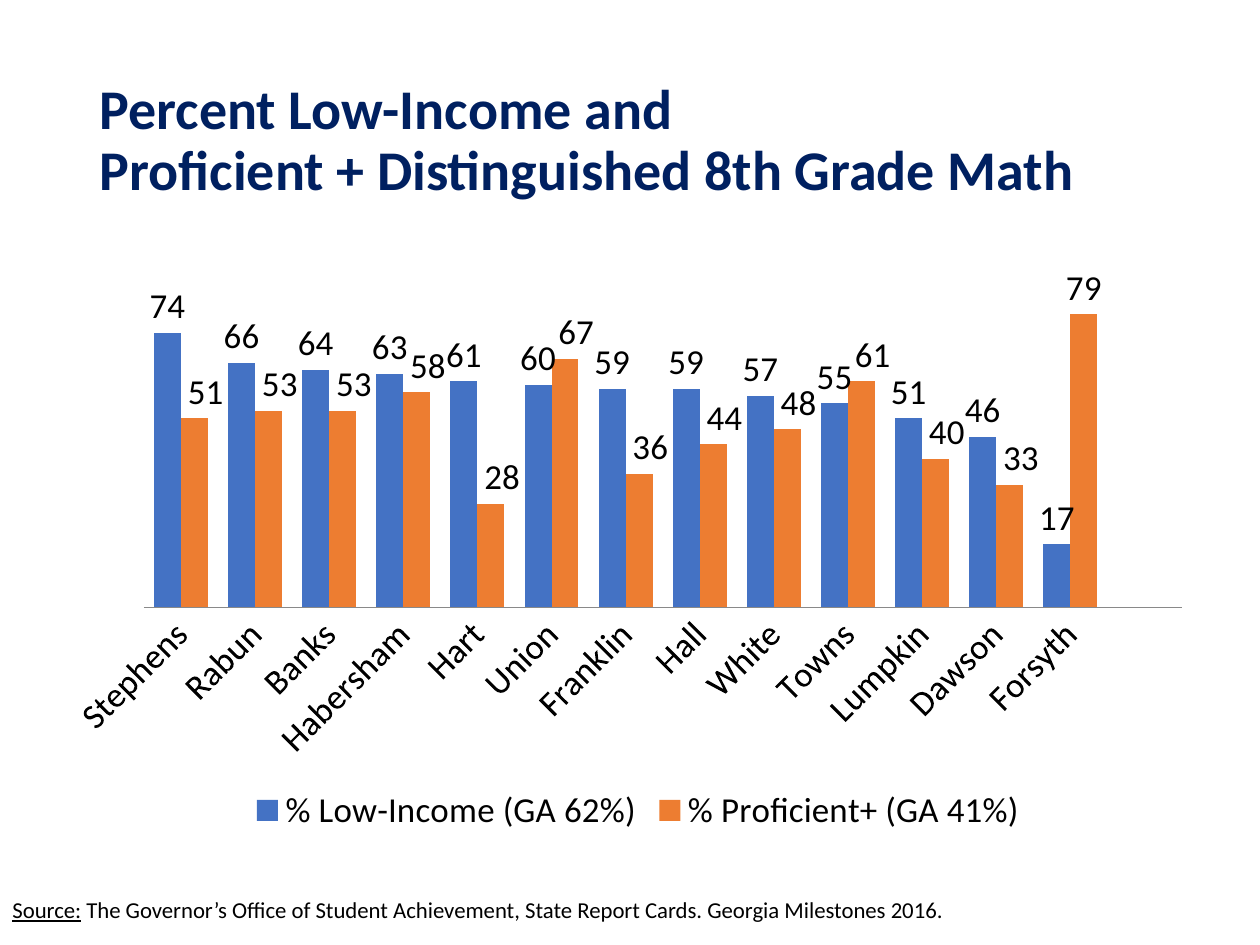
from lxml import etree
from pptx import Presentation
from pptx.chart.data import CategoryChartData
from pptx.dml.color import RGBColor
from pptx.enum.chart import XL_CHART_TYPE, XL_LABEL_POSITION, XL_LEGEND_POSITION, XL_TICK_MARK
from pptx.enum.text import MSO_ANCHOR, MSO_AUTO_SIZE
from pptx.oxml.ns import qn
from pptx.util import Inches, Pt

COLUMNS = XL_CHART_TYPE.COLUMN_CLUSTERED
OUTSIDE = XL_LABEL_POSITION.OUTSIDE_END
BOTTOM = XL_LEGEND_POSITION.BOTTOM
NO_TICK = XL_TICK_MARK.NONE
MIDDLE = MSO_ANCHOR.MIDDLE
FIT_SHAPE = MSO_AUTO_SIZE.SHAPE_TO_FIT_TEXT
FONT = "Calibri"
COLORS = {"title": "002060", "text": "000000", "axis": "898989",
          "income": "4472C4", "proficient": "ED7D31"}


def style(font, size, color):
    font.name = FONT
    font.size = Pt(size)
    font.color.rgb = RGBColor.from_string(COLORS[color])


def add_layout(parent, index, **values):
    layout = etree.Element(qn("c:layout"))
    manual = etree.SubElement(layout, qn("c:manualLayout"))
    for tag, value in values.items():
        etree.SubElement(manual, qn("c:" + tag)).set("val", str(value))
    for old in parent.findall(qn("c:layout")):
        parent.remove(old)
    parent.insert(index, layout)


prs = Presentation()
prs.slide_width, prs.slide_height = Inches(10), Inches(7.5)
s = prs.slides.add_slide(prs.slide_layouts[5])

title = s.shapes.title
title.left, title.top = Inches(0.69), Inches(0.4)
title.width, title.height = Inches(8.62), Inches(1.45)
tf = title.text_frame
tf.word_wrap = True
tf.vertical_anchor = MIDDLE
p = tf.paragraphs[0]
p.alignment = 1
p.line_spacing = 0.9
for i, line in enumerate(["Percent Low-Income and ",
                          "Proficient + Distinguished 8th Grade Math"]):
    if i:
        p.add_line_break()
    r = p.add_run()
    r.text = line
    style(r.font, 32, "title")
    r.font.bold = True

counties = ["Stephens", "Rabun", "Banks", "Habersham", "Hart", "Union", "Franklin",
            "Hall", "White", "Towns", "Lumpkin", "Dawson", "Forsyth"]
series = [
    ("% Low-Income (GA 62%)", "income",
     [74, 66, 64, 63, 61, 60, 59, 59, 57, 55, 51, 46, 17, None]),
    ("% Proficient+ (GA 41%)", "proficient",
     [51, 53, 53, 58, 28, 67, 36, 44, 48, 61, 40, 33, 79, None]),
]
data = CategoryChartData(number_format="0")
data.categories = counties + [""]
for name, color, values in series:
    data.add_series(name, values)
chart = s.shapes.add_chart(COLUMNS, Inches(0.57), Inches(1.97),
                           Inches(8.96), Inches(4.69), data).chart
style(chart.font, 20, "text")
chart.has_title = False
chart.has_legend = True
chart.legend.position = BOTTOM
chart.legend.include_in_layout = False
style(chart.legend.font, 20, "text")

axis = chart.category_axis
axis.major_tick_mark = axis.minor_tick_mark = NO_TICK
axis.format.line.color.rgb = RGBColor.from_string(COLORS["axis"])
style(axis.tick_labels.font, 20, "text")
axis._element.find(qn("c:txPr")).find(qn("a:bodyPr")).set("rot", "-2700000")
axis = chart.value_axis
axis.minimum_scale, axis.maximum_scale = 0, 90
axis.has_major_gridlines = False
axis.visible = False

plot = chart.plots[0]
plot.gap_width = 75
plot.overlap = 0
plot.vary_by_categories = False
for ser, (name, color, values) in zip(plot.series, series):
    ser.format.fill.solid()
    ser.format.fill.fore_color.rgb = RGBColor.from_string(COLORS[color])
    labels = ser.data_labels
    labels.show_value = True
    labels.number_format = "0"
    labels.number_format_is_linked = False
    labels.position = OUTSIDE
    style(labels.font, 20, "text")

proficient = plot.series[1]
for i in range(len(counties) - 1):
    label = proficient.points[i].data_label
    label.position = OUTSIDE
    style(label.font, 20, "text")
for label in proficient._element.iter(qn("c:dLbl")):
    add_layout(label, 1, x=0.01, y=0)
add_layout(chart._chartSpace.chart.plotArea, 0, layoutTarget="inner", xMode="edge",
           yMode="edge", x=0.061, y=0.043, w=0.922, h=0.565)

source = s.shapes.add_textbox(Inches(0), Inches(7.14), Inches(8.75), Inches(0.23))
tf = source.text_frame
tf.word_wrap = True
tf.auto_size = FIT_SHAPE
p = tf.paragraphs[0]
p.line_spacing = 0.6
for text, underline in [
    ("Source:", True),
    (" The Governor’s Office of Student Achievement, State Report Cards. "
     "Georgia Milestones 2016.", False),
]:
    r = p.add_run()
    r.text = text
    style(r.font, 13, "text")
    r.font.underline = underline

prs.save("out.pptx")
